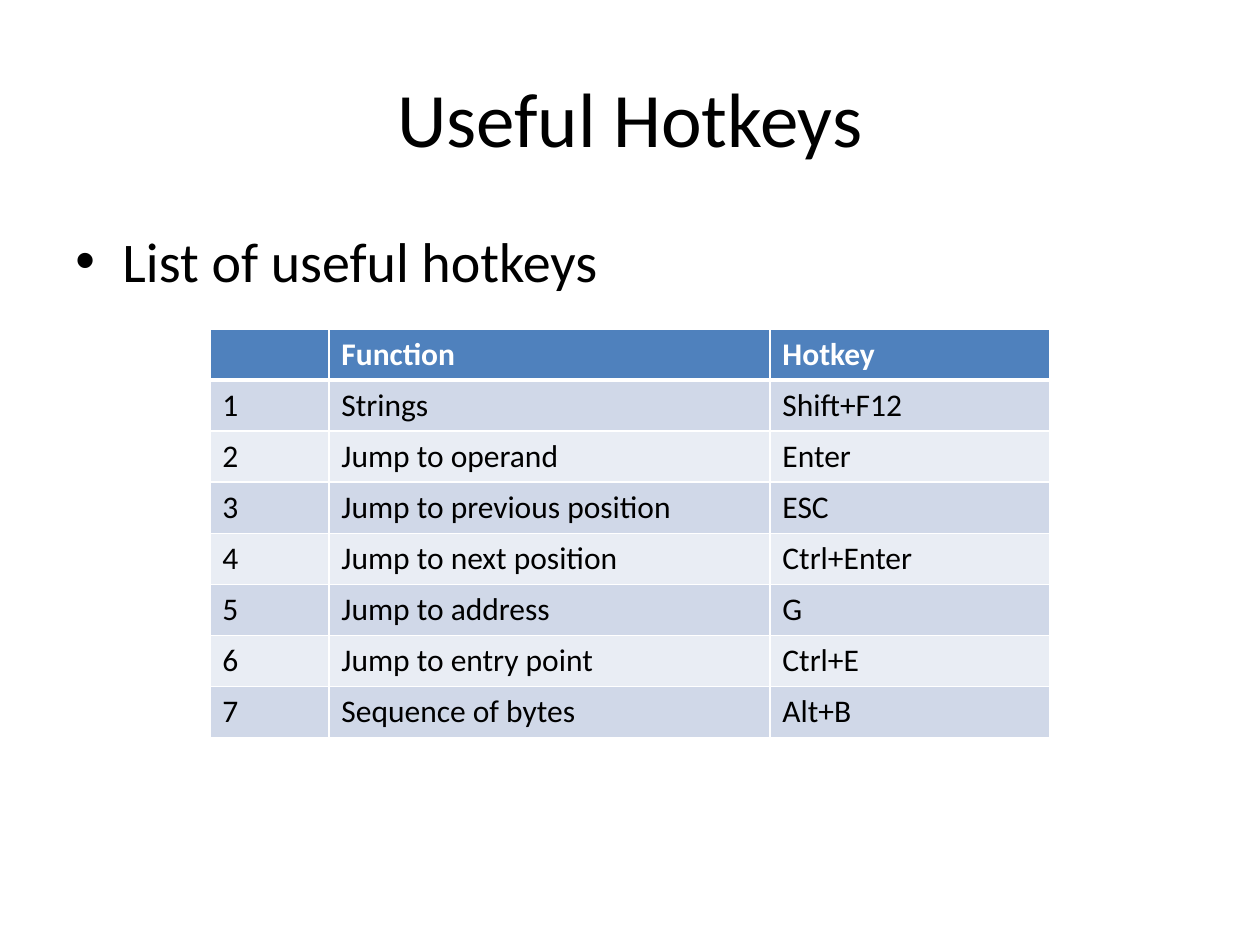
import pptx
import pptx.dml.color
import pptx.enum.text
import pptx.oxml
import pptx.oxml.ns
import pptx.util
from pptx.util import Cm

COLOURS = {
    "text": "000000",
    "paper": "FFFFFF",
    "header": "4F81BD",
    "odd": "D0D8E8",
    "even": "E9EDF4",
}
HOTKEYS = [
    ("Strings", "Shift+F12"),
    ("Jump to operand", "Enter"),
    ("Jump to previous position", "ESC"),
    ("Jump to next position", "Ctrl+Enter"),
    ("Jump to address", "G"),
    ("Jump to entry point", "Ctrl+E"),
    ("Sequence of bytes", "Alt+B"),
]


def add_xml(parent, markup):
    parent.append(pptx.oxml.parse_xml(markup.format(ns=pptx.oxml.ns.nsdecls("a"))))


class PageBuilder:
    """Holds the text style and the current slide."""

    font = "Calibri"

    def __init__(self, page):
        self.page = page

    def add_span(self, para, text, size, colour="text", bold=False):
        span = para.add_run()
        span.text = text
        formats = {"name": self.font, "size": pptx.util.Pt(size), "bold": bold}
        for name, value in formats.items():
            setattr(span.font, name, value)
        span.font.color.rgb = pptx.dml.color.RGBColor.from_string(COLOURS[colour])

    def place(self, box, left, top, width, height):
        places = {"left": left, "top": top, "width": width, "height": height}
        for name, value in places.items():
            setattr(box, name, Cm(value))

    def title(self, text, *place):
        box = self.page.shapes.title
        self.place(box, *place)
        box.text_frame.vertical_anchor = pptx.enum.text.MSO_ANCHOR.MIDDLE
        para = box.text_frame.paragraphs[0]
        para.alignment = pptx.enum.text.PP_ALIGN.CENTER
        self.add_span(para, text, 44)

    def bullet(self, text, *place):
        box = self.page.shapes.add_textbox(*map(Cm, place))
        box.text_frame.word_wrap = True
        para = box.text_frame.paragraphs[0]
        properties = para._p.get_or_add_pPr()
        properties.set("marL", str(Cm(0.95)))
        properties.set("indent", str(-Cm(0.95)))
        add_xml(properties, '<a:spcBef {ns}><a:spcPct val="20000"/></a:spcBef>')
        add_xml(properties, '<a:buFont {ns} typeface="Arial"/>')
        add_xml(properties, '<a:buChar {ns} char="•"/>')
        self.add_span(para, text, 32)

    def borders(self, cell, top, bottom):
        properties = cell._tc.get_or_add_tcPr()
        for side, points in {"L": 1, "R": 1, "T": top, "B": bottom}.items():
            add_xml(
                properties,
                f'<a:ln{side} {{ns}} w="{pptx.util.Pt(points)}"><a:solidFill>'
                f'<a:srgbClr val="{COLOURS["paper"]}"/></a:solidFill></a:ln{side}>',
            )

    def table(self, rows, left, top, widths, row_height):
        frame = self.page.shapes.add_table(
            len(rows), len(widths), Cm(left), Cm(top),
            Cm(sum(widths)), Cm(row_height * len(rows)),
        )
        grid = frame.table
        for column, width in zip(grid.columns, widths):
            column.width = Cm(width)
        for index, values in enumerate(rows):
            grid.rows[index].height = Cm(row_height)
            header = index == 0
            fill = "header" if header else "odd" if index % 2 else "even"
            for column, value in enumerate(values):
                cell = grid.cell(index, column)
                # The rule under the header is thicker than the others
                self.borders(cell, 3 if index == 1 else 1, 3 if header else 1)
                cell.fill.solid()
                cell.fill.fore_color.rgb = pptx.dml.color.RGBColor.from_string(
                    COLOURS[fill]
                )
                if value:
                    colour = "paper" if header else "text"
                    para = cell.text_frame.paragraphs[0]
                    self.add_span(para, value, 18, colour, header)


def main():
    deck = pptx.Presentation()
    deck.slide_width, deck.slide_height = Cm(25.4), Cm(19.05)
    builder = PageBuilder(deck.slides.add_slide(deck.slide_layouts[5]))

    # Title
    builder.title("Useful Hotkeys", 1.27, 0.76, 22.86, 3.18)

    # Numbered hotkey table
    rows = [("", "Function", "Hotkey")]
    rows += [(str(number), *entry) for number, entry in enumerate(HOTKEYS, 1)]
    builder.table(rows, 4.23, 6.63, [2.4, 8.89, 5.64], 1.03)

    # Bulleted introduction
    builder.bullet("List of useful hotkeys", 1.27, 4.45, 22.86, 12.57)

    deck.save("out.pptx")


if __name__ == "__main__":
    main()
